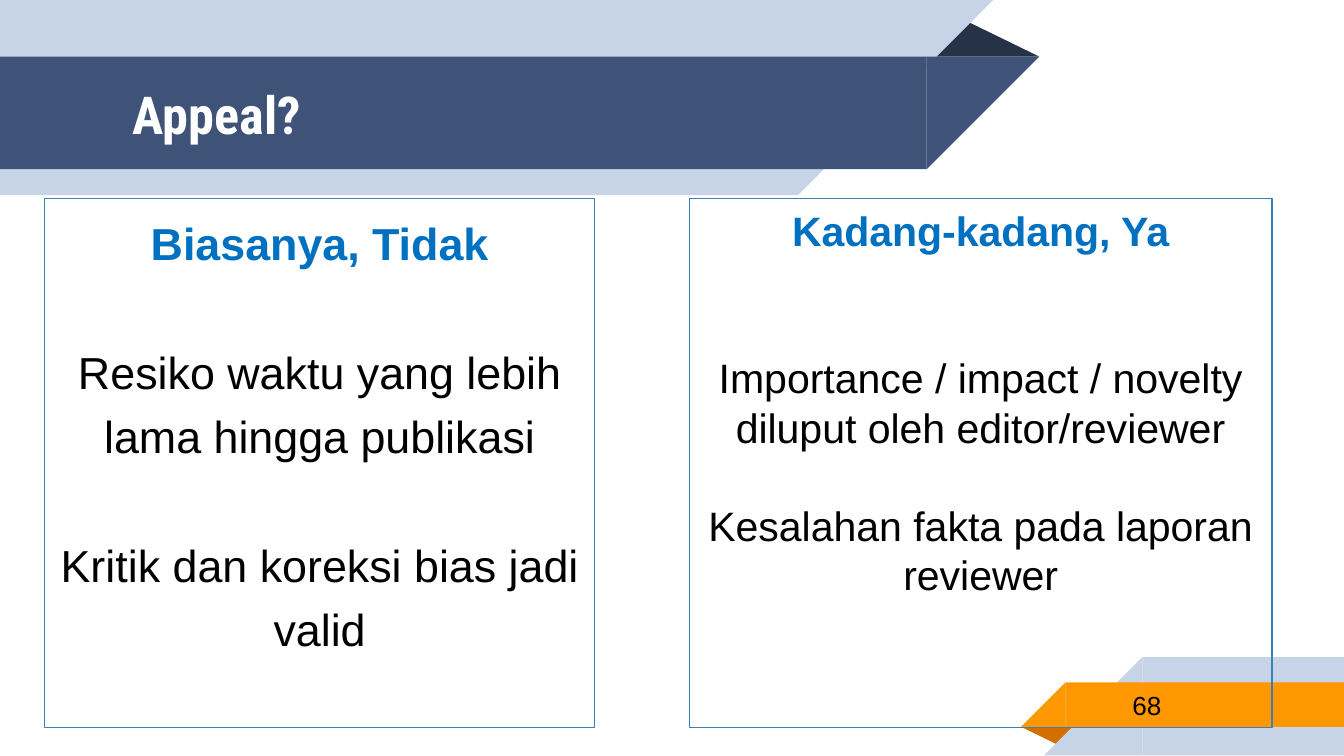
from pptx import Presentation
from pptx.dml.color import RGBColor
from pptx.enum.shapes import MSO_SHAPE as SHAPE
from pptx.enum.text import MSO_ANCHOR as ANCHOR, PP_ALIGN as ALIGN
from pptx.util import Cm, Pt

WHITE = RGBColor(0xFF, 0xFF, 0xFF)
BLACK = RGBColor(0x00, 0x00, 0x00)
NAVY = RGBColor(0x3F, 0x53, 0x78)
DARK = RGBColor(0x26, 0x32, 0x48)
PALE = RGBColor(0xC7, 0xD3, 0xE6)
ORANGE = RGBColor(0xFF, 0x98, 0x00)
BROWN = RGBColor(0xD2, 0x6F, 0x00)
BLUE = RGBColor(0x00, 0x70, 0xC0)
BORDER = RGBColor(0x3A, 0x81, 0xBA)


def add_shape(s, kind, box, color=None, rotation=0, flip=False):
    """Add a preset shape without shadow or outline, filled if a colour is given."""
    sp = s.shapes.add_shape(kind, *map(Cm, box))
    sp.shadow.inherit = False
    sp.line.fill.background()
    sp.rotation = rotation
    if flip:
        sp.element.spPr.xfrm.set("flipH", "1")
    if color is None:
        sp.fill.background()
    else:
        sp.fill.solid()
        sp.fill.fore_color.rgb = color
    return sp


def add_fold(s, box, color, rotation=0):
    """Add the folded corner of a ribbon."""
    sp = add_shape(s, SHAPE.ISOSCELES_TRIANGLE, box, color, rotation)
    sp.adjustments[0] = 0.324


def add_band(s, box, color, left_end=False):
    """Add a band whose right or left end is cut at 45 degrees."""
    x, y, w, h = box
    rect_x, tip_x = (x + h, x) if left_end else (x, x + w - h)
    add_shape(s, SHAPE.RECTANGLE, (rect_x, y, w - h, h), color)
    add_shape(s, SHAPE.RIGHT_TRIANGLE, (tip_x, y, h, h), color,
              0 if left_end else 180, True)


def format_run(r, **values):
    """Apply font values to a run."""
    r.font.color.rgb = values.pop("color")
    for name, value in values.items():
        setattr(r.font, name, value)


def add_label(s, box, text, **values):
    """Add one line of vertically centred text."""
    tf = s.shapes.add_textbox(*map(Cm, box)).text_frame
    frame = {"word_wrap": True, "vertical_anchor": ANCHOR.MIDDLE}
    for side in ("left", "top", "right", "bottom"):
        frame[f"margin_{side}"] = Cm(0.25)
    for name, value in frame.items():
        setattr(tf, name, value)
    r = tf.paragraphs[0].add_run()
    r.text = text
    format_run(r, **values)


def add_header(s, box, title):
    """Add the title ribbon at the top of the slide."""
    x, y, w, h = box
    add_fold(s, (x + w - 2.15, y + 0.36, 2.15, 0.71), DARK)
    add_band(s, (x, y, w - 0.87, h), PALE)
    add_band(s, (x, y + 1.07, w, 2.13), NAVY)
    add_label(s, (x + 2.26, y + 1.09, 15.27, 2.13), title,
              name="Roboto Condensed", size=Pt(28), bold=True, color=WHITE)


def add_footer(s, box, number):
    """Add the page number ribbon at the lower right."""
    x, y, w, h = box
    add_fold(s, (x, y + 1.32, 1.09, 0.36), BROWN, 180)
    add_band(s, (x + 0.43, y, w - 0.43, h), PALE, True)
    add_band(s, (x, y + 0.48, w, 0.84), ORANGE, True)
    add_label(s, (x + 1.85, y + 0.46, 4.14, 0.89), number,
              name="Arial", size=Pt(14), color=BLACK)


def add_panel(s, box, size, pitch, paragraphs):
    """Add an outlined panel from (text, lines of gap before) pairs."""
    sp = add_shape(s, SHAPE.RECTANGLE, box)
    sp.line.color.rgb = BORDER
    sp.line.width = Pt(0.75)
    tf = sp.text_frame
    tf.word_wrap = True
    tf.vertical_anchor = ANCHOR.TOP
    for i, (text, gap) in enumerate(paragraphs):
        p = tf.add_paragraph() if i else tf.paragraphs[0]
        layout = {"alignment": ALIGN.CENTER, "line_spacing": Pt(pitch),
                  "space_before": Pt(gap * pitch)}
        for name, value in layout.items():
            setattr(p, name, value)
        r = p.add_run()
        r.text = text
        format_run(r, name="Arial", size=Pt(size), bold=i == 0,
                   color=BLACK if i else BLUE)


def main():
    """Build the slide and save it."""
    prs = Presentation()
    prs.slide_width, prs.slide_height = Cm(25.4), Cm(14.29)
    s = prs.slides.add_slide(prs.slide_layouts[6])
    add_header(s, (0, 0, 19.64, 3.69), "Appeal?")
    add_footer(s, (19.3, 12.42, 6.1, 1.86), "68")
    add_panel(s, (0.84, 3.75, 10.4, 10), 24, 34.5, [
        ("Biasanya, Tidak", 0),
        ("Resiko waktu yang lebih lama hingga publikasi", 1),
        ("Kritik dan koreksi bias jadi valid", 1),
    ])
    add_panel(s, (13.03, 3.75, 11.01, 10), 22, 26.4, [
        ("Kadang-kadang, Ya", 0),
        ("Importance / impact / novelty diluput oleh editor/reviewer", 2),
        ("Kesalahan fakta pada laporan reviewer", 1),
    ])
    prs.save("out.pptx")


if __name__ == "__main__":
    main()
